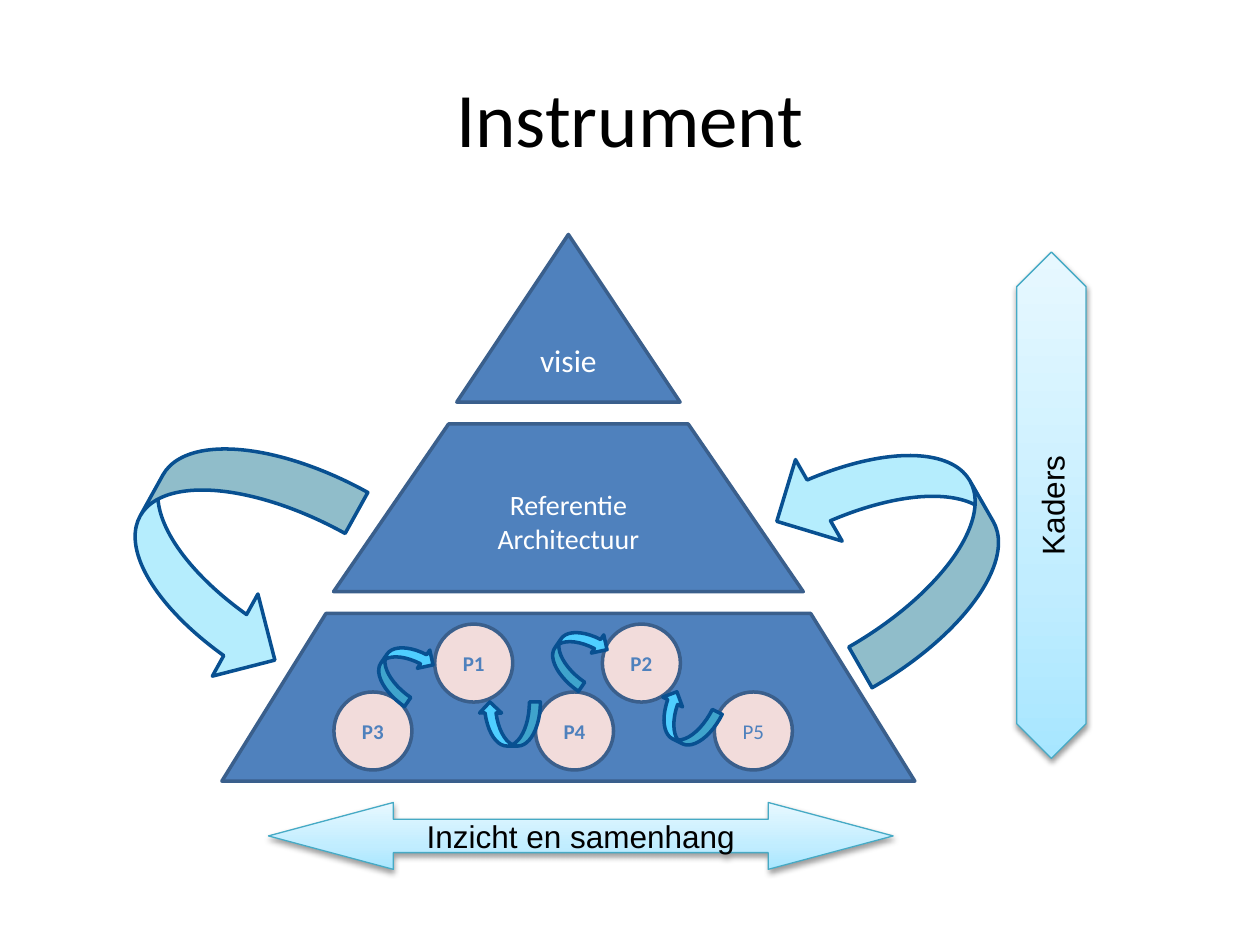
from dataclasses import dataclass

from lxml import etree
from pptx import Presentation
from pptx.dml.color import RGBColor
from pptx.enum.shapes import MSO_SHAPE
from pptx.enum.text import MSO_ANCHOR, PP_ALIGN
from pptx.oxml.ns import qn
from pptx.util import Pt

TRIANGLE = MSO_SHAPE.ISOSCELES_TRIANGLE
TRAPEZOID = MSO_SHAPE.TRAPEZOID
CIRCLE = MSO_SHAPE.FLOWCHART_CONNECTOR
CURVE_DOWN = MSO_SHAPE.CURVED_DOWN_ARROW
CURVE_UP = MSO_SHAPE.CURVED_UP_ARROW
WIDE_ARROW = MSO_SHAPE.LEFT_RIGHT_ARROW
TALL_ARROW = MSO_SHAPE.UP_DOWN_ARROW
MIDDLE, TOP = MSO_ANCHOR.MIDDLE, MSO_ANCHOR.TOP
CENTER, LEFT = PP_ALIGN.CENTER, PP_ALIGN.LEFT


@dataclass(frozen=True)
class Theme:
    blue: str = "4F81BD"
    edge: str = "3A5F8C"
    pink: str = "F2DCDB"
    curve: str = "4FCEFF"
    pale: str = "B5EDFD"
    navy: str = "085091"
    teal: str = "46AAC5"
    black: str = "000000"
    white: str = "FFFFFF"
    glow: tuple = ((0, "A7E6FF"), (35, "C1EDFF"), (100, "E7F8FF"))
    head: str = "Calibri"
    label: str = "Arial"
    title: int = 44
    large: int = 18
    body: int = 16
    small: int = 12


T = Theme()


def add_text(shape, lines, font, size, color, bold=False,
             align=CENTER, anchor=MIDDLE, wrap=True):
    frame = shape.text_frame
    frame.word_wrap = wrap
    frame.vertical_anchor = anchor
    for i, line in enumerate(lines):
        para = frame.add_paragraph() if i else frame.paragraphs[0]
        para.alignment = align
        run = para.add_run()
        run.text = line
        run.font.name = font
        run.font.size = Pt(size)
        run.font.bold = bold
        run.font.color.rgb = RGBColor.from_string(color)


def add_box(shapes, box, lines, font, size, **style):
    text = shapes.add_textbox(*map(Pt, box))
    add_text(text, lines, font, size, T.black, **style)
    return text


def add_part(shapes, kind, box, fill, edge, width=2, turn=0, adjust=()):
    part = shapes.add_shape(kind, *map(Pt, box))
    part.shadow.inherit = False
    part.rotation = turn
    for i, value in enumerate(adjust):
        part.adjustments[i] = value
    if fill:
        part.fill.solid()
        part.fill.fore_color.rgb = RGBColor.from_string(fill)
    part.line.color.rgb = RGBColor.from_string(edge)
    part.line.width = Pt(width)
    return part


def add_color(parent, color):
    return etree.SubElement(parent, qn("a:srgbClr"), val=color)


def add_glow(shapes, kind, box, adjust):
    """Double arrow with a three-stop gradient and a soft shadow below."""
    part = add_part(shapes, kind, box, None, T.teal, 0.75, adjust=adjust)
    part.fill.gradient()
    part.fill.gradient_angle = 90
    props = part._element.spPr
    stops = props.find(".//" + qn("a:gsLst"))
    for stop in list(stops):
        stops.remove(stop)
    for place, color in T.glow:
        stop = etree.SubElement(stops, qn("a:gs"), pos=str(place * 1000))
        add_color(stop, color)
    shadow = etree.SubElement(
        props.find(qn("a:effectLst")), qn("a:outerShdw"),
        blurRad=str(Pt(3.1)), dist=str(Pt(1.6)), dir="5400000", rotWithShape="0")
    etree.SubElement(add_color(shadow, T.black), qn("a:alpha"), val="38000")
    return part


def add_base(shapes, box):
    """Bottom tier: the projects and the small arrows that join them."""
    x, y, w, h = box
    add_part(shapes, TRAPEZOID, box, T.blue, T.edge, adjust=[0.621])
    upper, lower, size = 6, 44.8, 44.6
    for name, dx, dy in (("P1", 121.6, upper), ("P4", 179.2, lower),
                         ("P2", 217.4, upper), ("P5", 281.4, lower),
                         ("P3", 64, lower)):
        disc = add_part(shapes, CIRCLE, (x + dx, y + dy, size, size), T.pink, T.edge)
        add_text(disc, [name], T.head, T.small, T.blue, bold=name != "P5")
    for dx, dy, turn in ((86.3, 18.9, 304.4), (146.8, 50.5, 180),
                         (185.7, 10.2, 304.4), (246.9, 48.4, 206.5)):
        add_part(shapes, CURVE_DOWN, (x + dx, y + dy, 35.2, 25.2),
                 T.curve, T.navy, turn=turn, adjust=[0.25, 0.5, 0.25])


def add_pyramid(shapes, box):
    x, y, w, h = box
    tier = 95.8
    pitch = (h - tier) / 2

    def place(row, width):
        return x + (w - width) / 2, y + row * pitch, width, tier

    peak = add_part(shapes, TRIANGLE, place(0, 127.6), T.blue, T.edge)
    add_text(peak, ["visie"], T.head, T.large, T.white)
    core = add_part(shapes, TRAPEZOID, place(1, 268.4), T.blue, T.edge, adjust=[0.686])
    add_text(core, ["Referentie", "Architectuur"], T.head, T.body, T.white)
    add_base(shapes, place(2, w))
    for dx, dy, turn in ((316, 119.5, 240.2), (-64.8, 127.4, 119)):
        add_part(shapes, CURVE_UP, (x + dx, y + dy, 136.4, 107.3),
                 T.pale, T.navy, turn=turn, adjust=[0.25, 0.5, 0.25])


def add_insight(shapes, box):
    arrow = add_glow(shapes, WIDE_ARROW, box, [0.5, 1.868])
    add_text(arrow, ["Inzicht en samenhang"], T.label, T.large, T.black, wrap=False)


def add_frames(shapes, box):
    x, y, w, h = box
    add_glow(shapes, TALL_ARROW, box, [0.5, 1.459])
    wide, high = 71.3, 29
    spot = (x + w / 2 - wide / 2 + 0.5, y + h / 2 - high / 2, wide, high)
    label = add_box(shapes, spot, ["Kaders"], T.label, T.large,
                    align=LEFT, anchor=TOP, wrap=False)
    label.rotation = 270


def main():
    deck = Presentation()
    deck.slide_width, deck.slide_height = Pt(720), Pt(540)
    shapes = deck.slides.add_slide(deck.slide_layouts[6]).shapes
    add_box(shapes, (36, 21.6, 648, 90), ["Instrument"], T.head, T.title)
    add_pyramid(shapes.add_group_shape().shapes, (126.8, 134, 396, 312.4))
    add_insight(shapes, (153.4, 458.6, 357, 38.2))
    add_frames(shapes, (581, 144, 39.6, 289.4))
    deck.save("out.pptx")


if __name__ == "__main__":
    main()
